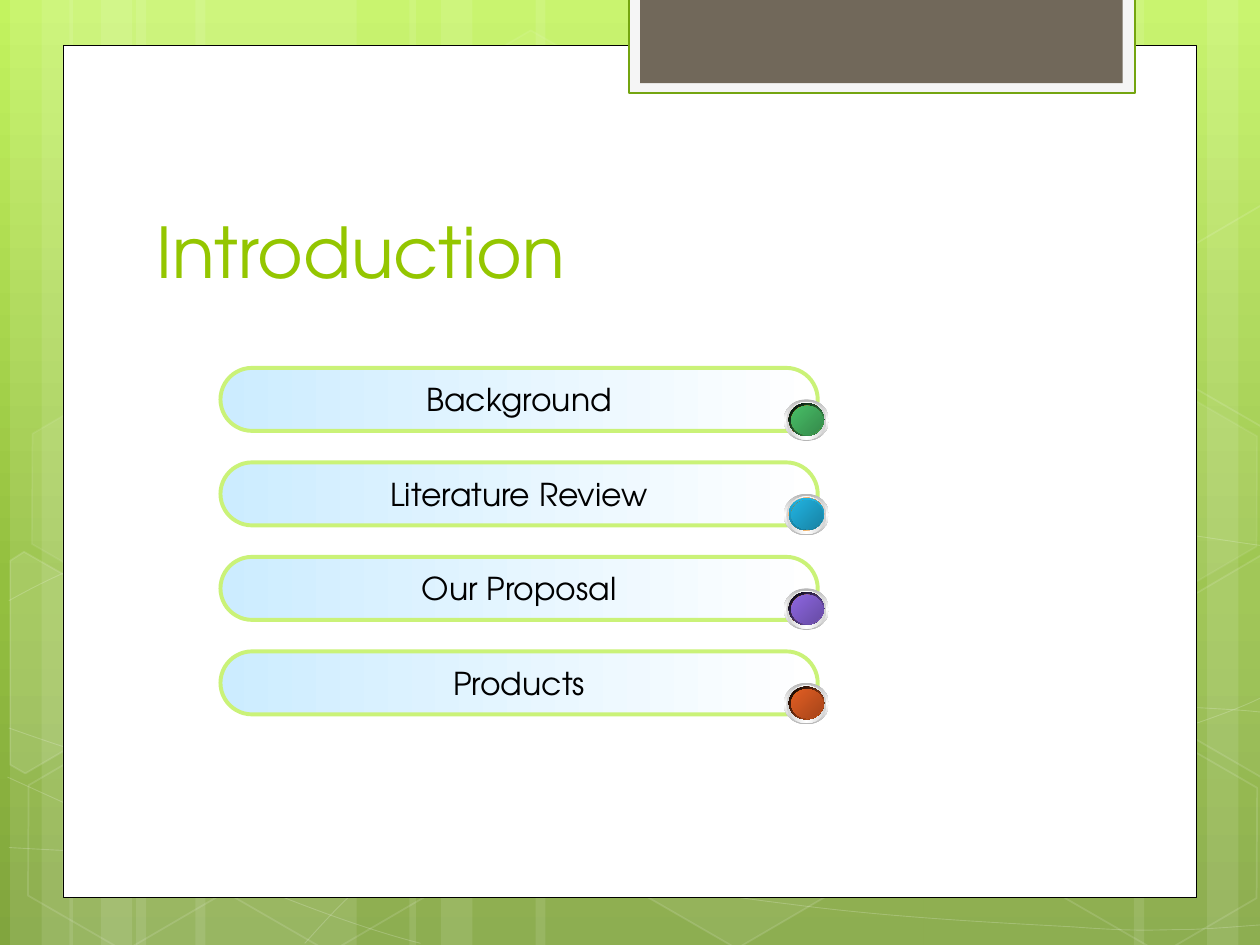
import copy
import math

import pptx
import pptx.dml.color
import pptx.enum.shapes
import pptx.enum.text
import pptx.oxml.ns
import pptx.util

Inches = pptx.util.Inches
Kind = pptx.enum.shapes.MSO_SHAPE
Align = pptx.enum.text.PP_ALIGN
Anchor = pptx.enum.text.MSO_ANCHOR
qn = pptx.oxml.ns.qn

FONT = "TeX Gyre Adventor"
TILT = 30

# left and width of the faint full-height bands
BANDS = [(1.08, 1.75), (0.08, 0.5), (0.33, 0.83), (1.55, 1.75), (0.55, 0.5),
         (0.8, 0.83), (7.33, 1.75), (9.58, 0.5), (9, 0.83), (4.25, 3.08),
         (3.25, 0.5), (3.5, 0.83)]

# start point, then cubic segments of three points each
WAVES = [
    [(0.07, 6.73), (0.61, 6.76), (1.15, 6.79), (1.9, 6.78), (2.65, 6.77),
     (3.58, 6.75), (4.58, 6.65), (5.58, 6.55), (7, 6.36), (7.92, 6.17),
     (8.83, 5.98), (9.77, 5.68), (10.07, 5.51)],
    [(0.07, 4.77), (0.36, 4.61), (0.65, 4.46), (1.21, 4.31), (1.78, 4.16),
     (2.59, 3.94), (3.47, 3.87), (4.36, 3.8), (5.44, 3.79), (6.54, 3.87),
     (7.64, 3.95), (9.47, 4.26), (10.07, 4.34)],
    [(0.06, 6.17), (1.27, 6.72), (2.47, 7.27), (3.34, 7.49)],
    [(0.07, 5.78), (0.38, 5.89), (0.7, 6), (1.28, 6.16), (1.86, 6.31),
     (2.73, 6.56), (3.57, 6.73), (4.4, 6.9), (5.45, 7.08), (6.28, 7.18),
     (7.11, 7.29), (8, 7.33), (8.53, 7.36), (9.05, 7.4), (9.19, 7.38),
     (9.45, 7.38), (9.71, 7.37), (9.89, 7.35), (10.07, 7.34)],
    [(2.42, 7.49), (2.6, 7.29), (2.78, 7.09), (3.02, 6.91), (3.26, 6.73),
     (3.6, 6.53), (3.88, 6.39), (4.16, 6.25), (4.33, 6.19), (4.7, 6.09),
     (5.06, 5.99), (5.73, 5.85), (6.08, 5.78), (6.44, 5.71), (6.49, 5.71),
     (6.8, 5.69), (7.11, 5.66), (7.6, 5.63), (7.94, 5.62), (8.29, 5.61),
     (8.86, 5.62), (8.86, 5.62), (9.08, 5.62), (9.31, 5.62), (9.53, 5.62),
     (9.71, 5.63), (9.88, 5.64), (9.97, 5.65), (10.06, 5.66), (10.03, 5.65),
     (10.06, 5.66)],
]

# left, top, fill opacity, line opacity
HEXES = [(3.34, 0.36, 4, 8), (4.97, 5.89, 6, 12), (0.11, 5.91, 0, 12),
         (0.14, 3.12, 7, 8), (1.74, 5.92, 0, 12), (7.53, 4.53, 10, 12),
         (8.34, 5.93, 0, 12), (8.34, 3.14, 7, 8)]

# centre, corners and fill opacity of the hexagons cut by the slide edge
CUTS = [
    ((0.36, 5.35), [(0.08, 4.45), (0.19, 4.38), (0.96, 4.82), (0.95, 5.7),
                    (0.2, 6.14), (0.08, 6.07)], 10),
    ((9.85, 5.2), [(9.26, 4.85), (10.01, 4.41), (10.09, 4.46),
                   (10.09, 6.13), (10.02, 6.17), (9.26, 5.73)], 4),
    ((9.85, 2.41), [(9.26, 2.07), (10.01, 1.63), (10.1, 1.68),
                    (10.09, 3.35), (10.02, 3.39), (9.26, 2.95)], 0),
]

# label, light and dark button colour, start, end and angle of the button rim
ITEMS = [("Background", "48BE67", "358B4B", "000000", "48BE67", 45),
         ("Literature Review", "21B3E1", "1883A4", "21B3E1", "1880A1", 90),
         ("Our Proposal", "8D67E1", "674BA4", "000000", "8D67E1", 45),
         ("Products", "E35E23", "A6451A", "000000", "E35E23", 45)]


def rgb(code):
    return pptx.dml.color.RGBColor.from_string(code)


def fade(node, part):
    """Set the opacity, in percent, of the colour inside a fill or line."""
    for tint in node.iter(qn("a:srgbClr")):
        tint.append(tint.makeelement(qn("a:alpha"), {"val": str(part * 1000)}))


def blend(fill, owner, tints, angle, spots=None):
    """Fill with a gradient; the angle runs clockwise from left to right."""
    fill.gradient()
    fill.gradient_angle = -angle % 360
    stops = next(owner.iter(qn("a:gsLst")))
    while len(stops) < len(tints):
        stops.append(copy.deepcopy(stops[0]))
    for i, stop in enumerate(fill.gradient_stops):
        stop.color.rgb = rgb(tints[i])
        stop.position = spots[i] if spots else i / (len(tints) - 1)


def style(shape, fill=None, line=None, width=1, fog=100, haze=100):
    """Set fill and line; fog and haze are their opacities in percent."""
    shape.shadow.inherit = False
    props = shape.element.spPr
    if fill and fog:
        shape.fill.solid()
        shape.fill.fore_color.rgb = rgb(fill)
        if fog < 100:
            fade(props.find(qn("a:solidFill")), fog)
    else:
        shape.fill.background()
    if line:
        shape.line.color.rgb = rgb(line)
        shape.line.width = pptx.util.Pt(width)
        if haze < 100:
            fade(props.find(qn("a:ln")), haze)
    else:
        shape.line.fill.background()


def add(shapes, kind, box, **look):
    shape = shapes.add_shape(kind, *map(Inches, box))
    style(shape, **look)
    return shape


def trace(shapes, points, close, **look):
    """Draw an outline on a grid of a thousandth of an inch."""
    grid = [(x * 1000, y * 1000) for x, y in points]
    pen = shapes.build_freeform(*grid[0], scale=Inches(0.001))
    pen.add_line_segments(grid[1:], close=close)
    shape = pen.convert_to_shape()
    style(shape, **look)
    return shape


def bend(shape):
    """Join each three line steps of an outline into one cubic curve."""
    steps = list(shape.element.iter(qn("a:lnTo")))
    for i in range(0, len(steps), 3):
        arc = steps[i].makeelement(qn("a:cubicBezTo"), {})
        steps[i].addprevious(arc)
        for step in steps[i:i + 3]:
            arc.append(step[0])
            step.getparent().remove(step)


def turn(point, mid, angle):
    """Turn a point clockwise about mid."""
    x, y = point[0] - mid[0], point[1] - mid[1]
    cos, sin = math.cos(math.radians(angle)), math.sin(math.radians(angle))
    return mid[0] + x * cos - y * sin, mid[1] + x * sin + y * cos


def write(frame, text, size, color, align, anchor):
    frame.vertical_anchor = anchor
    para = frame.paragraphs[0]
    para.alignment = align
    run = para.add_run()
    run.text = text
    run.font.name = FONT
    run.font.size = pptx.util.Pt(size)
    run.font.color.rgb = rgb(color)


def decor(shapes):
    white = "FFFFFF"
    for left, width in BANDS:
        add(shapes, Kind.RECTANGLE, (left, 0, width, 7.5), fill=white, fog=10)
    for wave in WAVES:
        bend(trace(shapes, wave, False, line=white, width=0.5, haze=20))
    for left, top, fog, haze in HEXES:
        cell = add(shapes, Kind.HEXAGON, (left, top, 1.75, 1.52),
                   fill=white, line=white, fog=fog, haze=haze)
        cell.adjustments[0] = 0.285
        cell.adjustments[1] = 1.155
        cell.rotation = TILT
    for mid, points, fog in CUTS:
        flat = [turn(point, mid, -TILT) for point in points]
        cell = trace(shapes, flat, True, fill=white, line=white,
                     fog=fog, haze=12)
        cell.rotation = TILT


def card(shapes):
    add(shapes, Kind.RECTANGLE, (0.5, 0.36, 9, 6.76),
        fill="FFFFFF", line="000000", width=0.5)
    add(shapes, Kind.RECTANGLE, (4.99, -0.02, 4.02, 0.76),
        fill="F5F5F5", line="74A510", width=1.25)
    add(shapes, Kind.RECTANGLE, (5.08, -0.02, 3.83, 0.68), fill="71685A")


def head(slide):
    title = slide.shapes.title
    title.left, title.top, title.width, title.height = map(
        Inches, (1.14, 1.12, 7.68, 1.25))
    title.text_frame.auto_size = pptx.enum.text.MSO_AUTO_SIZE.NONE
    write(title.text_frame, "Introduction", 40, "94C600",
          Align.LEFT, Anchor.BOTTOM)
    # bring the title in front of the white card
    title.element.getparent().append(title.element)


def pill(shapes, top, text):
    bar = add(shapes, Kind.ROUNDED_RECTANGLE, (1.75, top, 4.74, 0.5),
              line="CAF278", width=2.25)
    bar.adjustments[0] = 0.5
    blend(bar.fill, bar.element, ["CCECFF", "FFFFFF"], 0)
    bar.text_frame.word_wrap = False
    write(bar.text_frame, text, 18, "000000", Align.CENTER, Anchor.MIDDLE)


def knob(shapes, top, light, dark, start, end, angle):
    """Stack ovals, largest first, into a shiny button."""
    rim, face = (6.26, 0.03, 0.28, 0.26), (6.28, 0.05, 0.25, 0.23)
    rings = [((6.22, 0, 0.36, 0.33), ["B6B6B6", "FFFFFF", "B6B6B6"], 90),
             ((6.24, 0.02, 0.32, 0.3), ["D1D1D1", "FFFFFF", "D1D1D1"], 0),
             (rim, ["FFFFFF", "E68200", "FFFFFF"], 45),
             (rim, [start, end], angle),
             (face, ["B06400", "E68200", "B06400"], 315),
             (face, [light, dark], 45)]
    group = shapes.add_group_shape()
    for (left, drop, width, height), tints, slant in rings:
        ring = add(group.shapes, Kind.OVAL, (left, top + drop, width, height))
        blend(ring.fill, ring.element, tints, slant)


def main():
    deck = pptx.Presentation()
    deck.slide_width, deck.slide_height = Inches(10), Inches(7.5)
    slide = deck.slides.add_slide(deck.slide_layouts[5])
    blend(slide.background.fill, slide.element,
          ["C3F35F", "93BF3F", "81A53E"], 90, [0, 0.62, 1])
    decor(slide.shapes)
    card(slide.shapes)
    head(slide)
    for i, (text, *tints) in enumerate(ITEMS):
        top = 2.92 + 0.75 * i
        pill(slide.shapes, top, text)
        knob(slide.shapes, top + 0.25, *tints)
    deck.save("out.pptx")


if __name__ == "__main__":
    main()
